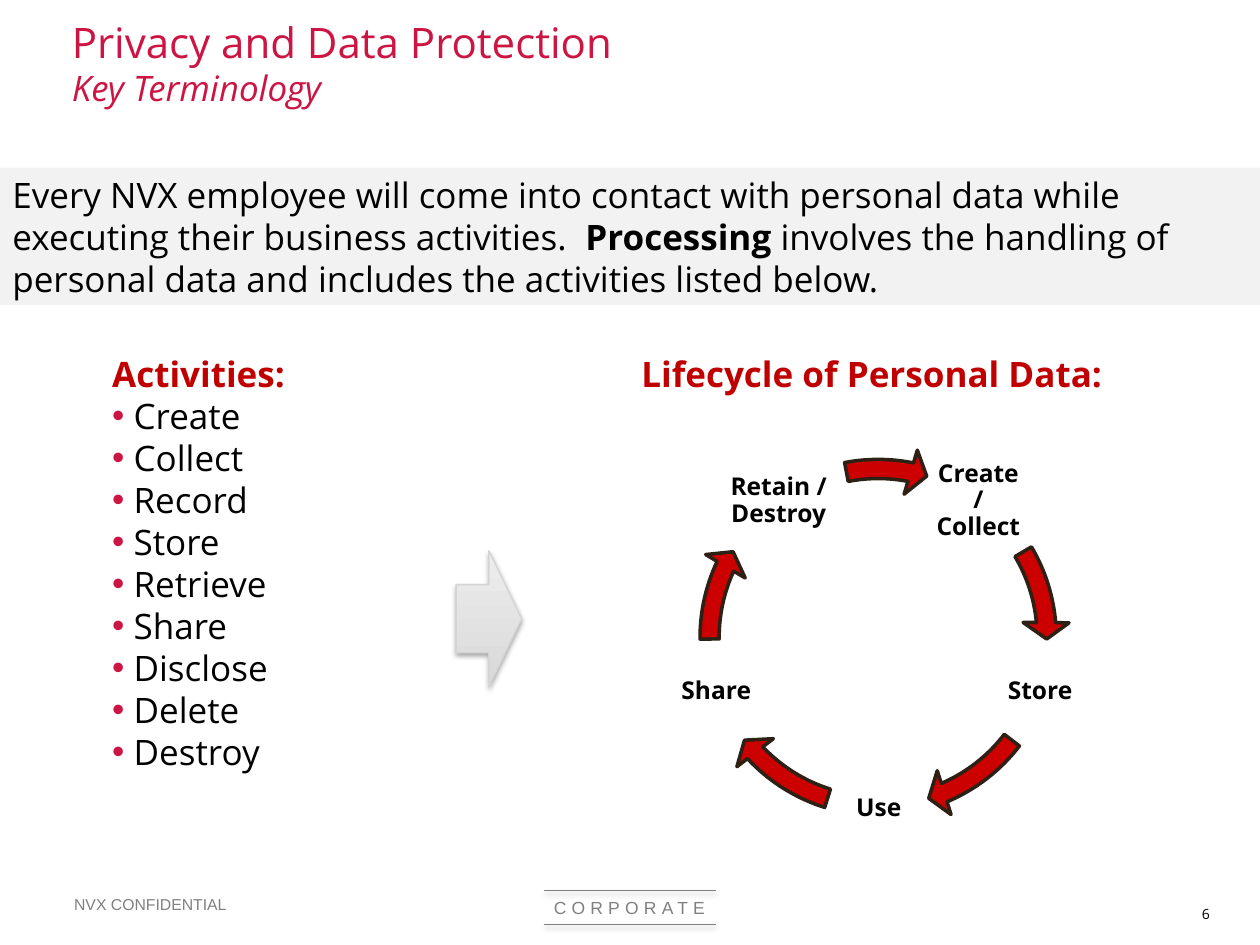
from dataclasses import dataclass

from lxml.etree import SubElement
from pptx import Presentation
from pptx.dml.color import RGBColor
from pptx.enum.shapes import MSO_CONNECTOR, MSO_SHAPE
from pptx.enum.text import MSO_ANCHOR as Anchor, MSO_AUTO_SIZE as AutoSize, PP_ALIGN as Align
from pptx.oxml.ns import qn
from pptx.util import Inches, Pt


@dataclass(frozen=True)
class Theme:
    """Fonts, colours and type sizes of the slide."""
    sans: str = "Open Sans"
    footer_font: str = "Arial"
    black: str = "000000"
    crimson: str = "CC1543"
    heading: str = "C00000"
    band: str = "F2F2F2"
    grey: str = "808080"
    cycle_fill: str = "CC0000"
    cycle_line: str = "2D2015"
    pointer_low: str = "D9D9D9"
    pointer_high: str = "EDEDED"
    pointer_line: str = "D4D4D4"
    title_size: float = 24
    body_size: float = 20
    label_size: float = 14
    corporate_size: float = 10
    footer_size: float = 9
    number_size: float = 8


@dataclass(frozen=True)
class Box:
    """A rectangle in inches."""
    left: float
    top: float
    width: float
    height: float

    def lengths(self) -> tuple:
        return tuple(Inches(v) for v in (self.left, self.top, self.width, self.height))


@dataclass(frozen=True)
class Stage:
    """A lifecycle label and the start and end angles of the arrow after it."""
    label: str
    box: Box
    start: float
    end: float


THEME = Theme()
RING = Box(5.45, 3.54, 3.04, 3.04)
STAGES = (
    Stage("Create / Collect", Box(7.36, 3.57, 0.81, 0.81), 329.4, 354.93),
    Stage("Store", Box(7.85, 5.08, 0.81, 0.81), 37.52, 66.95),
    Stage("Use", Box(6.57, 6.01, 0.81, 0.81), 107.46, 136.89),
    Stage("Share", Box(5.28, 5.08, 0.81, 0.81), 179.49, 205.01),
    Stage("Retain / Destroy", Box(5.64, 3.57, 1.08, 0.81), 259.14, 281.14),
)
ACTIVITIES = ("Create", "Collect", "Record", "Store", "Retrieve",
              "Share", "Disclose", "Delete", "Destroy")


def rgb(value: str) -> RGBColor:
    """Return the colour for a hex string."""
    return RGBColor.from_string(value)


def style(run, size: float, color: str = THEME.black, bold: bool = False,
          italic: bool = False, font: str = THEME.sans) -> None:
    """Format one run."""
    run.font.name, run.font.size = font, Pt(size)
    run.font.bold, run.font.italic = bold, italic
    run.font.color.rgb = rgb(color)


def place(shape, box: Box) -> None:
    """Move and size a shape."""
    shape.left, shape.top, shape.width, shape.height = box.lengths()


def add_text(slide, box: Box, text: str, size: float, align=Align.LEFT,
             anchor=Anchor.TOP, wrap: bool = True, **look):
    """Add a one-paragraph text box and return its frame."""
    frame = slide.shapes.add_textbox(*box.lengths()).text_frame
    frame.word_wrap, frame.vertical_anchor = wrap, anchor
    frame.text = text
    frame.paragraphs[0].alignment = align
    style(frame.paragraphs[0].runs[0], size, **look)
    return frame


def add_shadow(shape, alpha: int, distance: float) -> None:
    """Give a shape a soft shadow straight below it."""
    properties = shape._element.spPr
    for old in properties.findall(qn("a:effectLst")):
        properties.remove(old)
    effects = SubElement(properties, qn("a:effectLst"))
    shadow = SubElement(effects, qn("a:outerShdw"), blurRad=str(Pt(3.1)),
                        dist=str(Pt(distance)), dir="5400000", rotWithShape="0")
    color = SubElement(shadow, qn("a:srgbClr"), val=THEME.black)
    SubElement(color, qn("a:alpha"), val=str(alpha * 1000))


def set_bullet(paragraph, bulleted: bool) -> None:
    """Set the indent and the bullet of a list paragraph."""
    indent = Inches(0.17) if bulleted else 0
    properties = paragraph._p.get_or_add_pPr()
    properties.set("marL", str(indent))
    properties.set("indent", str(-indent))
    if bulleted:
        color = SubElement(properties, qn("a:buClr"))
        SubElement(color, qn("a:srgbClr"), val=THEME.crimson)
        SubElement(properties, qn("a:buFont"), typeface="Arial")
        SubElement(properties, qn("a:buChar"), char="•")
    else:
        SubElement(properties, qn("a:buNone"))


def fill_title(title) -> None:
    """Write the title and its italic second line."""
    place(title, Box(0.47, 0.17, 9.06, 0.65))
    frame = title.text_frame
    frame.auto_size, frame.vertical_anchor = AutoSize.NONE, Anchor.MIDDLE
    frame.text = "Privacy and Data Protection\vKey Terminology"
    paragraph = frame.paragraphs[0]
    paragraph.alignment = Align.LEFT
    main, subtitle = paragraph.runs
    style(main, THEME.title_size, THEME.crimson)
    style(subtitle, THEME.body_size, THEME.crimson, italic=True)


def fill_activities(body) -> None:
    """Write the heading and the bulleted activities."""
    place(body, Box(0.79, 2.75, 8.91, 3.23))
    frame = body.text_frame
    frame.auto_size = AutoSize.NONE
    frame.text = "\n".join(("Activities:",) + ACTIVITIES)
    for index, paragraph in enumerate(frame.paragraphs):
        is_heading = index == 0
        paragraph.space_before = Pt(0)
        set_bullet(paragraph, not is_heading)
        style(paragraph.runs[0], THEME.body_size,
              THEME.heading if is_heading else THEME.black, bold=is_heading)


def add_band(slide) -> None:
    """Add the grey introduction band."""
    band = slide.shapes.add_shape(MSO_SHAPE.RECTANGLE, *Box(0, 1.33, 10, 1.09).lengths())
    band.shadow.inherit = False
    band.fill.solid()
    band.fill.fore_color.rgb = rgb(THEME.band)
    band.line.fill.background()
    band.text_frame.word_wrap, band.text_frame.vertical_anchor = True, Anchor.TOP
    paragraph = band.text_frame.paragraphs[0]
    paragraph.alignment = Align.LEFT
    for text, bold in (
        ("Every NVX employee will come into contact with personal data while "
         "executing their business activities.  ", False),
        ("Processing ", True),
        ("involves the handling of personal data and includes the activities "
         "listed below.", False),
    ):
        run = paragraph.add_run()
        run.text = text
        style(run, THEME.body_size, bold=bold)


def add_stage(slide, stage: Stage) -> None:
    """Add a lifecycle label and its curved arrow."""
    label = add_text(slide, stage.box, stage.label, THEME.label_size, Align.CENTER,
                     Anchor.MIDDLE, bold=True)
    label.margin_left = label.margin_right = Inches(0.02)
    label.margin_top = label.margin_bottom = Inches(0.02)
    label.paragraphs[0].line_spacing = 0.9
    arrow = slide.shapes.add_shape(MSO_SHAPE.CIRCULAR_ARROW, *RING.lengths())
    arrow.shadow.inherit = False
    degree = 0.6
    for index, value in enumerate((0.05, 5.59 * degree, stage.end * degree,
                                   stage.start * degree, 0.06)):
        arrow.adjustments[index] = value
    arrow.fill.solid()
    arrow.fill.fore_color.rgb = rgb(THEME.cycle_fill)
    arrow.line.color.rgb = rgb(THEME.cycle_line)
    arrow.line.width = Pt(2)


def add_pointer(slide) -> None:
    """Add the shaded arrow between the list and the lifecycle."""
    pointer = slide.shapes.add_shape(MSO_SHAPE.RIGHT_ARROW, *Box(3.62, 4.37, 0.52, 1.08).lengths())
    pointer.fill.gradient()
    pointer.fill.gradient_angle = 90
    for stop, color in zip(pointer.fill.gradient_stops, (THEME.pointer_low, THEME.pointer_high)):
        stop.color.rgb = rgb(color)
    pointer.line.color.rgb = rgb(THEME.pointer_line)
    pointer.line.width = Pt(0.75)
    add_shadow(pointer, 35, 1.8)


def add_footer(slide) -> None:
    """Add the footer texts, rules and slide number."""
    look = {"color": THEME.grey, "font": THEME.footer_font}
    add_text(slide, Box(0.49, 7.04, 1.63, 0.27), "NVX CONFIDENTIAL", THEME.footer_size,
             anchor=Anchor.MIDDLE, **look)
    corporate = add_text(slide, Box(4.23, 7.07, 1.53, 0.27), "CORPORATE",
                         THEME.corporate_size, Align.CENTER, **look)
    corporate.paragraphs[0].runs[0]._r.get_or_add_rPr().set("spc", "300")
    for y in (7.07, 7.34):
        rule = slide.shapes.add_connector(MSO_CONNECTOR.STRAIGHT, Inches(4.32), Inches(y),
                                          Inches(5.68), Inches(y))
        rule.line.color.rgb = rgb(THEME.grey)
        rule.line.width = Pt(0.5)
        add_shadow(rule, 38, 1.6)
    add_text(slide, Box(9.44, 7.14, 0.26, 0.24), "6", THEME.number_size, wrap=False)


def main() -> None:
    """Build and save the slide."""
    deck = Presentation()
    deck.slide_width, deck.slide_height = Inches(10), Inches(7.5)
    slide = deck.slides.add_slide(deck.slide_layouts[1])
    fill_title(slide.shapes.title)
    fill_activities(slide.placeholders[1])
    add_band(slide)
    for stage in STAGES:
        add_stage(slide, stage)
    add_text(slide, Box(4.27, 2.75, 5.3, 0.44), "Lifecycle of Personal Data:",
             THEME.body_size, Align.CENTER, color=THEME.heading, bold=True)
    add_pointer(slide)
    add_footer(slide)
    deck.save("out.pptx")


if __name__ == "__main__":
    main()
